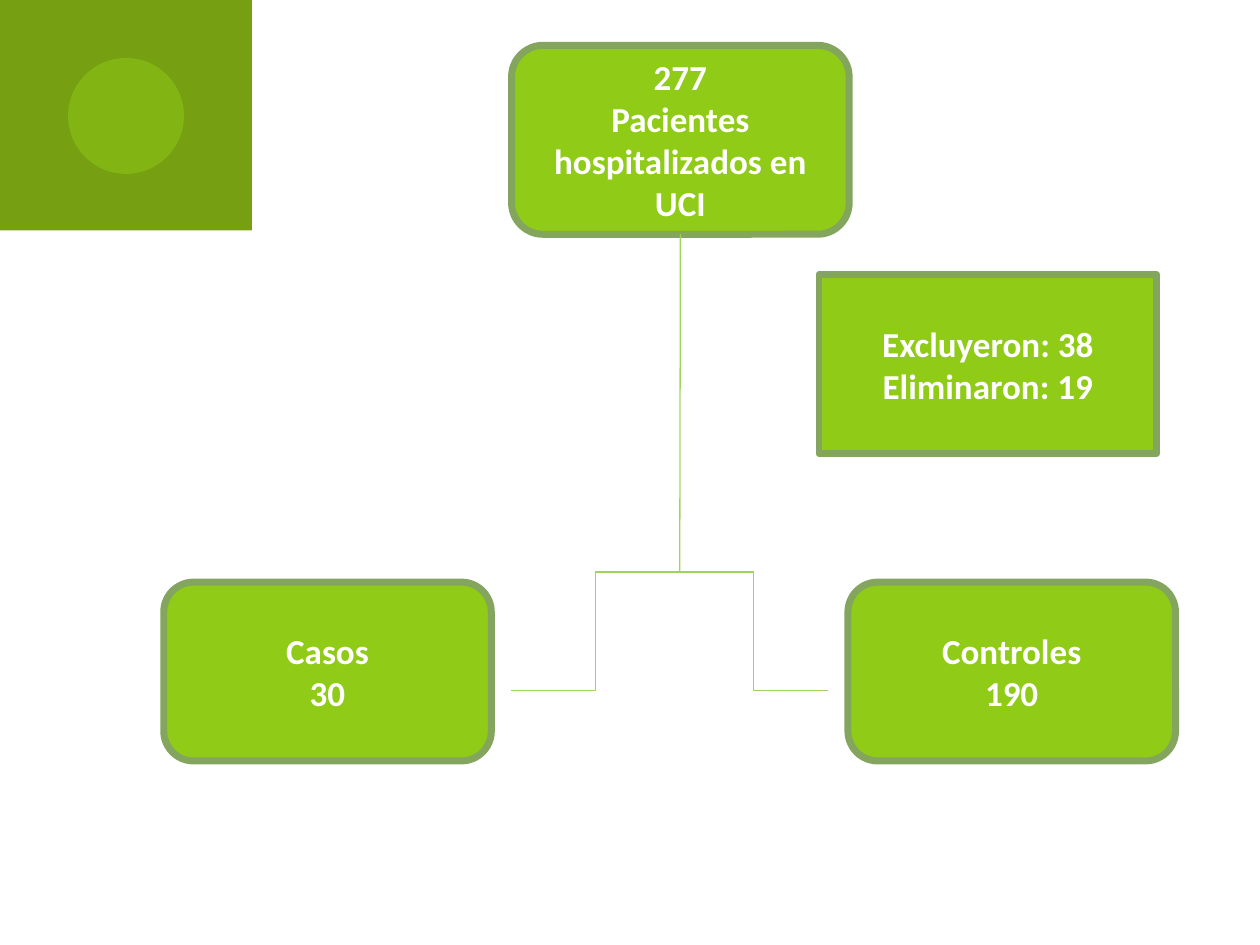
from lxml.etree import SubElement
from pptx import Presentation
from pptx.dml.color import RGBColor
from pptx.enum.shapes import MSO_CONNECTOR, MSO_SHAPE
from pptx.enum.text import MSO_ANCHOR, PP_ALIGN
from pptx.oxml.ns import qn
from pptx.util import Inches, Pt

DARK = RGBColor(0x76, 0x9F, 0x11)
LIME = RGBColor(0x8F, 0xCB, 0x17)
EDGE = RGBColor(0x84, 0xA5, 0x5E)
LINK = RGBColor(0x9F, 0xD4, 0x5C)
WHITE = RGBColor(0xFF, 0xFF, 0xFF)

WIDTH, HEIGHT = Inches(10), Inches(7.5)
ROUND, RECT = MSO_SHAPE.ROUNDED_RECTANGLE, MSO_SHAPE.RECTANGLE
FONT = {"name": "Calibri", "size": Pt(20), "bold": True}
FRAME = {"word_wrap": True, "vertical_anchor": MSO_ANCHOR.MIDDLE}

ROOT = (40.6, 4.8, 26.8, 20)
SIDE = (65, 29.07, 26.8, 18.93)
LEFT = (13, 61.6, 26, 18.93)
RIGHT = (67.3, 61.6, 26, 18.93)
FORK = (53.95, 60.53)
ENDS = [(65.7, 73.07), (40.6, 73.07)]


def scale(*shares):
    sizes = (WIDTH, HEIGHT) * 2
    return [int(size * share / 100) for size, share in zip(sizes, shares)]


def set_all(target, values):
    for key, value in values.items():
        setattr(target, key, value)


def add_form(slide, kind, area, color):
    form = slide.shapes.add_shape(kind, *scale(*area))
    form.shadow.inherit = False
    form.fill.solid()
    form.fill.fore_color.rgb = color
    form.line.fill.background()
    return form


def add_badge(slide):
    add_form(slide, RECT, (0, 0, 20, 24.4), DARK)
    disc = add_form(slide, MSO_SHAPE.OVAL, (5.4, 6.13, 9.2, 12.27), LIME)
    color = disc.fill._xPr.find(".//" + qn("a:srgbClr"))
    SubElement(color, qn("a:alpha"), val="50000")


def add_box(slide, kind, area, lines):
    box = add_form(slide, kind, area, LIME)
    box.line.color.rgb = EDGE
    box.line.width = Pt(4)
    frame = box.text_frame
    set_all(frame, FRAME)
    frame.text = "\n".join(lines)
    for para in frame.paragraphs:
        para.alignment = PP_ALIGN.CENTER
        font = para.runs[0].font
        set_all(font, FONT)
        font.color.rgb = WHITE
    return box


def add_link(slide, kind, start, end):
    link = slide.shapes.add_connector(kind, *scale(*start, *end))
    link.line.color.rgb = LINK
    link.line.width = Pt(0.75)
    SubElement(link._element.spPr, qn("a:effectLst"))
    return link


def main():
    deck = Presentation()
    set_all(deck, {"slide_width": WIDTH, "slide_height": HEIGHT})
    slide = deck.slides.add_slide(deck.slide_layouts[6])
    add_badge(slide)
    root = add_box(slide, ROUND, ROOT, ["277", "Pacientes hospitalizados en UCI"])
    add_box(slide, RECT, SIDE, ["Excluyeron: 38", "Eliminaron: 19"])
    trunk = add_link(slide, MSO_CONNECTOR.STRAIGHT, (FORK[0], 24.8), FORK)
    trunk.begin_connect(root, 2)
    for end in ENDS:
        add_link(slide, MSO_CONNECTOR.ELBOW, FORK, end)
    add_box(slide, ROUND, LEFT, ["Casos", "30"])
    add_box(slide, ROUND, RIGHT, ["Controles", "190"])
    deck.save("out.pptx")


if __name__ == "__main__":
    main()
